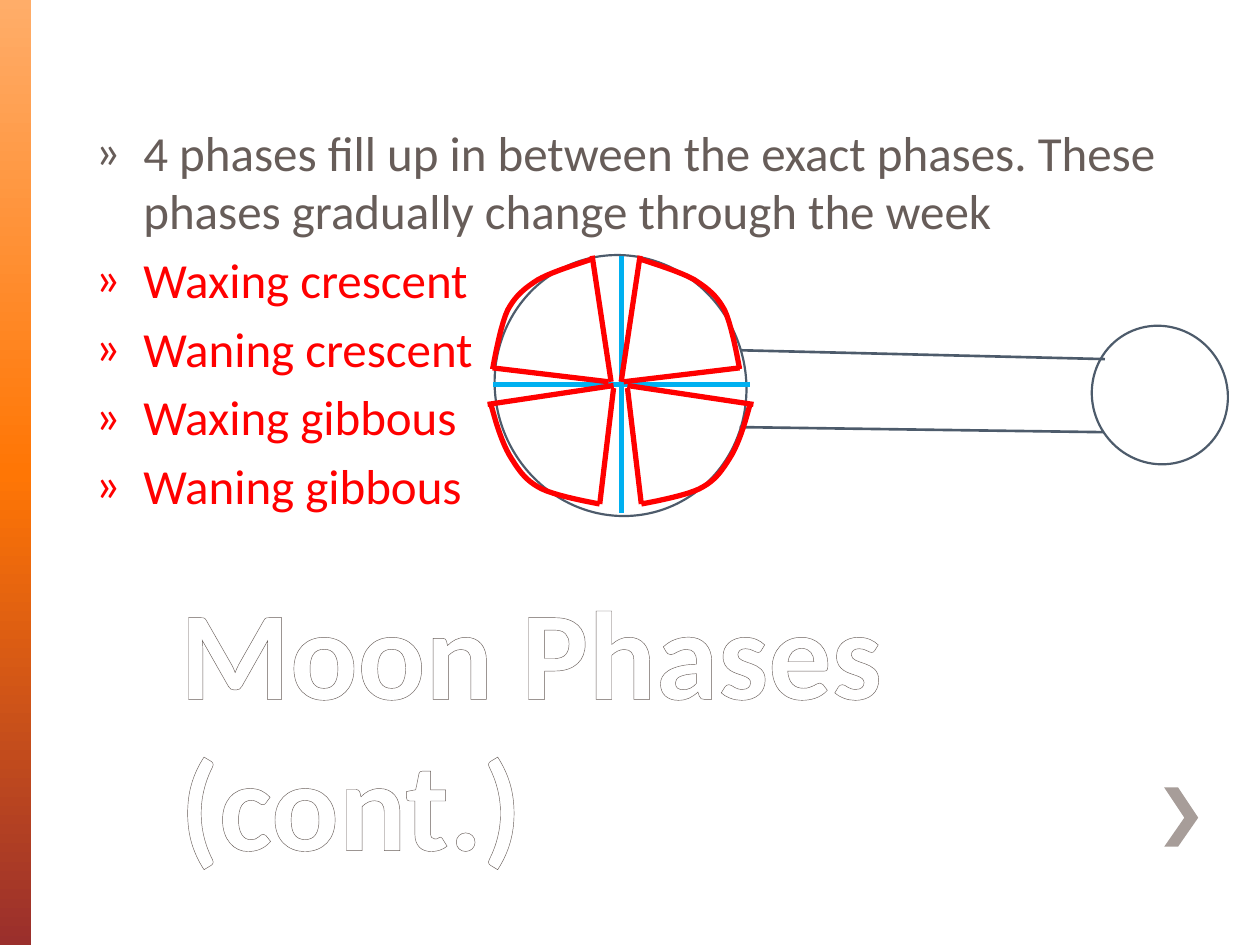
"""Build the Moon Phases slide with its diagram of the four in-between phases."""
from lxml.etree import SubElement
from pptx import Presentation
from pptx.dml.color import RGBColor
from pptx.enum.shapes import MSO_CONNECTOR, MSO_SHAPE
from pptx.enum.text import MSO_ANCHOR
from pptx.oxml import parse_xml
from pptx.oxml.ns import nsdecls, qn
from pptx.util import Inches, Pt

COLORS = {"text": "675D59", "red": "FF0000", "blue": "00B0F0", "slate": "4D5B6B",
          "white": "FFFFFF", "chevron": "A79D99"}
BAND_STOPS = [(0, "FFAD69"), (50, "FF7605"), (100, "9A2F2C")]
FONT = "Calibri"
TITLE = "Moon Phases (cont.)"
BULLETS = [
    ("4 phases fill up in between the exact phases. These phases gradually change through the week", "text"),
    ("Waxing crescent", "red"),
    ("Waning crescent", "red"),
    ("Waxing gibbous", "red"),
    ("Waning gibbous", "red"),
]
CHEVRON = [(9.35, 6.25), (9.24, 6.25), (9.4, 6.49), (9.24, 6.72), (9.35, 6.72), (9.51, 6.49)]
CIRCLES = [((8.67, 2.58, 1.07, 1.11), 149.8), ((3.93, 2.02, 1.99, 2.08), 341.9)]
BEAMS = [((5.87, 3.39), (8.76, 3.43)), ((5.88, 2.78), (8.77, 2.85))]
AXES = [((4.93, 2.03), (4.93, 4.07)), ((5.95, 3.05), (3.91, 3.05))]
WEDGES = [
    {"mirror": 4.89,
     "sides": [((5.08, 2.03), (4.93, 3.03)), ((5.87, 2.92), (4.95, 3.03))],
     "arc": [(5.09, 2.06), (5.24, 2.11), (5.4, 2.16), (5.51, 2.22), (5.62, 2.29),
             (5.69, 2.35), (5.75, 2.46), (5.81, 2.58), (5.87, 2.93), (5.87, 2.93)]},
    {"mirror": 4.925,
     "sides": [((3.87, 3.21), (4.87, 3.06)), ((4.76, 4), (4.87, 3.08))],
     "arc": [(3.9, 3.22), (3.94, 3.37), (3.99, 3.53), (4.06, 3.64), (4.13, 3.75),
             (4.18, 3.82), (4.3, 3.88), (4.42, 3.94), (4.76, 4), (4.76, 4)]},
]


def color(name):
    return RGBColor.from_string(COLORS[name])


def style_shape(shape, fill=None, line=None, width=1):
    shape.shadow.inherit = False
    for part, name in ((shape.fill, fill), (shape.line.fill, line)):
        if name:
            part.solid()
            part.fore_color.rgb = color(name)
        else:
            part.background()
    if line:
        shape.line.width = Pt(width)


def add_line(page, start, end, name, width):
    line = page.shapes.add_connector(MSO_CONNECTOR.STRAIGHT, *map(Inches, start + end))
    line.line.color.rgb = color(name)
    line.line.width = Pt(width)
    SubElement(line._element.spPr, qn("a:effectLst"))


def add_outline(page, points, close, **style):
    vertices = [(Inches(x), Inches(y)) for x, y in points]
    builder = page.shapes.build_freeform(*vertices[0])
    builder.add_line_segments(vertices[1:], close=close)
    style_shape(builder.convert_to_shape(), **style)


def curve_points(controls, steps=10):
    points = [controls[0]]
    for first in range(0, len(controls) - 1, 3):
        a, b, c, d = controls[first:first + 4]
        for step in range(1, steps + 1):
            t = step / steps
            weights = ((1 - t) ** 3, 3 * t * (1 - t) ** 2, 3 * t * t * (1 - t), t ** 3)
            points.append(tuple(sum(w * p[axis] for w, p in zip(weights, (a, b, c, d)))
                                for axis in (0, 1)))
    return points


def add_text_box(page, place, anchor):
    frame = page.shapes.add_textbox(*map(Inches, place)).text_frame
    frame.word_wrap = True
    frame.vertical_anchor = anchor
    return frame


def write(paragraph, text, name, size, bold=False, bullet=None, outline=None):
    span = paragraph.add_run()
    span.text = text
    span.font.name = FONT
    span.font.size = Pt(size)
    span.font.bold = bold
    span.font.color.rgb = color(name)
    if outline:
        span._r.get_or_add_rPr().insert(0, parse_xml(
            f'<a:ln {nsdecls("a")} w="{Pt(1)}"><a:solidFill>'
            f'<a:srgbClr val="{COLORS[outline]}"/></a:solidFill></a:ln>'))
    if bullet:
        properties = paragraph._p.get_or_add_pPr()
        properties.set("marL", str(Inches(0.38)))
        properties.set("indent", str(-Inches(0.38)))
        spacing = SubElement(properties, qn("a:spcBef"))
        SubElement(spacing, qn("a:spcPct"), val="20000")
        SubElement(properties, qn("a:buFont"), typeface=FONT)
        SubElement(properties, qn("a:buChar"), char=bullet)


def add_band(page):
    band = page.shapes.add_shape(MSO_SHAPE.RECTANGLE, 0, 0, Inches(0.25), Inches(7.5))
    style_shape(band)
    stops = "".join(f'<a:gs pos="{pos * 1000}"><a:srgbClr val="{value}"/></a:gs>'
                    for pos, value in BAND_STOPS)
    properties = band._element.spPr
    properties.replace(properties.find(qn("a:noFill")), parse_xml(
        f'<a:gradFill {nsdecls("a")} rotWithShape="1"><a:gsLst>{stops}</a:gsLst>'
        '<a:lin ang="5400000" scaled="0"/></a:gradFill>'))


def add_diagram(page):
    for start, end in BEAMS:
        add_line(page, start, end, "slate", 1.5)
    for place, rotation in CIRCLES:
        circle = page.shapes.add_shape(MSO_SHAPE.OVAL, *map(Inches, place))
        circle.rotation = rotation
        style_shape(circle, line="slate", width=1.25)
    for start, end in AXES:
        add_line(page, start, end, "blue", 3)
    for wedge in WEDGES:
        for mirrored in (False, True):
            def place(point):
                x, y = point
                return (2 * wedge["mirror"] - x if mirrored else x, y)

            for start, end in wedge["sides"]:
                add_line(page, place(start), place(end), "red", 3)
            arc = curve_points([place(point) for point in wedge["arc"]])
            add_outline(page, arc, close=False, line="red", width=3)


def main():
    deck = Presentation()
    deck.slide_width, deck.slide_height = Inches(10), Inches(7.5)
    page = deck.slides.add_slide(deck.slide_layouts[6])
    add_band(page)
    add_outline(page, CHEVRON, close=True, fill="chevron")
    title = add_text_box(page, (1.33, 5.75, 7.92, 1.25), MSO_ANCHOR.BOTTOM)
    write(title.paragraphs[0], TITLE, "white", 72, bold=True, outline="text")
    body = add_text_box(page, (0.66, 0.92, 8.84, 4.83), MSO_ANCHOR.TOP)
    for index, (text, name) in enumerate(BULLETS):
        paragraph = body.add_paragraph() if index else body.paragraphs[0]
        write(paragraph, text, name, 28, bullet="»")
    add_diagram(page)
    deck.save("out.pptx")


if __name__ == "__main__":
    main()
